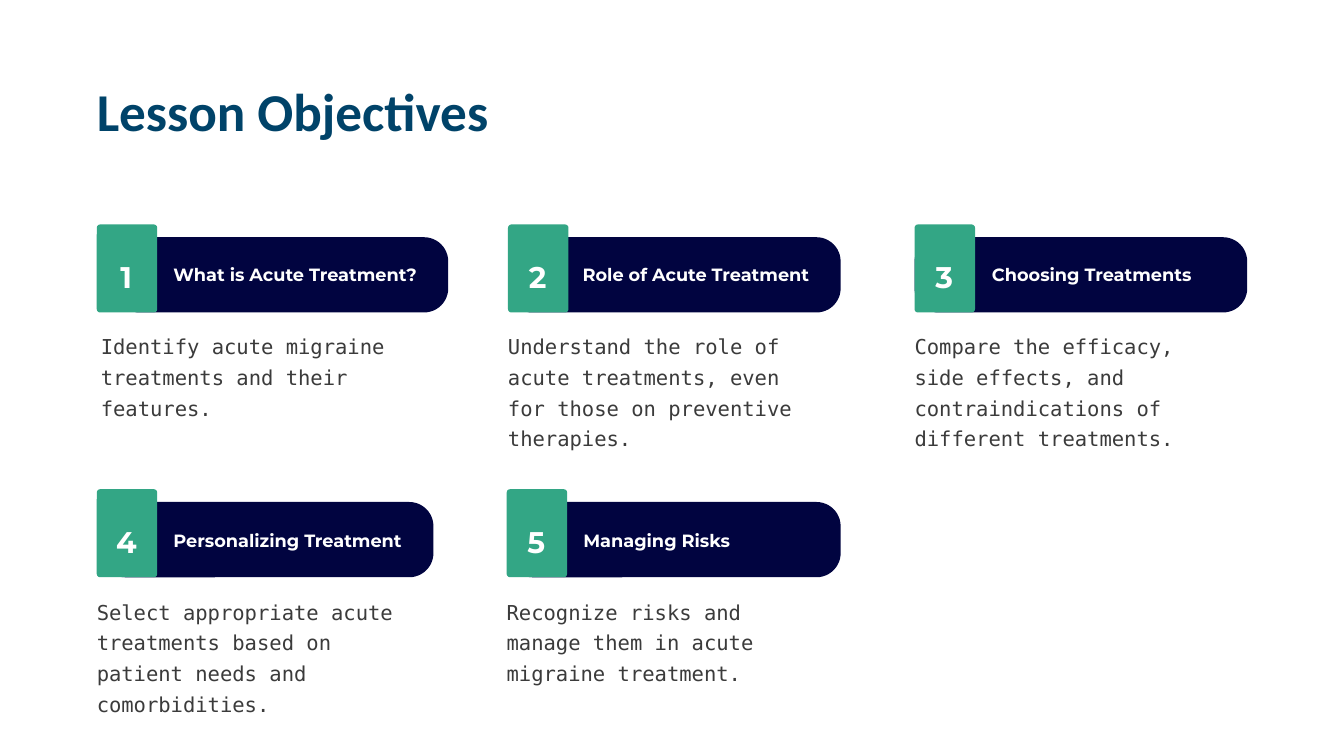
from pptx import Presentation
from pptx.dml.color import RGBColor
from pptx.enum.shapes import MSO_SHAPE
from pptx.enum.text import PP_ALIGN
from pptx.util import Inches, Pt

NAVY, GREEN = "010440", "33A685"
TITLE = "Lesson Objectives"

# row, left edges of (tab, bar, heading, body), heading, body
OBJECTIVES = [
    (0, (1.44, 1.72, 2.58, 1.5), "What is Acute Treatment?",
     "Identify acute migraine treatments and their features."),
    (0, (7.56, 7.56, 8.67, 7.56), "Role of Acute Treatment",
     "Understand the role of acute treatments, even for those on preventive therapies."),
    (0, (13.61, 13.61, 14.76, 13.61), "Choosing Treatments",
     "Compare the efficacy, side effects, and contraindications of different treatments."),
    (1, (1.44, 1.5, 2.58, 1.44), "Personalizing Treatment",
     "Select appropriate acute treatments based on patient needs and comorbidities."),
    (1, (7.54, 7.56, 8.68, 7.54), "Managing Risks",
     "Recognize risks and manage them in acute migraine treatment."),
]
SHAPE_TOP, SHAPE_PITCH = 3.34, 3.94
TEXT_TOP, TEXT_PITCH = 3.76, 3.95

# font values, colour, line spacing in points, alignment
STYLES = {
    "title": (dict(name="Calibri", size=Pt(57), bold=True), "004369", 79.8, PP_ALIGN.LEFT),
    "number": (dict(name="Montserrat", size=Pt(32), bold=True), "FFFFFF", 44.8, PP_ALIGN.CENTER),
    "heading": (dict(name="Montserrat", size=Pt(19), bold=True), "FFFFFF", 26.6, PP_ALIGN.LEFT),
    "body": (dict(name="DejaVu Sans Mono", size=Pt(22)), "3B3B3B", 33, PP_ALIGN.LEFT),
}


def rgb(color):
    return RGBColor.from_string(color)


def add_block(slide, x, y, w, h, radius, color):
    """Add a plain rounded rectangle with a corner radius in inches."""
    s = slide.shapes.add_shape(MSO_SHAPE.ROUNDED_RECTANGLE,
                               Inches(x), Inches(y), Inches(w), Inches(h))
    s.adjustments[0] = radius / min(w, h)
    s.fill.solid()
    s.fill.fore_color.rgb = rgb(color)
    s.line.fill.background()
    s.shadow.inherit = False


def add_text(slide, x, y, w, h, text, style):
    font, color, spacing, align = STYLES[style]
    tf = slide.shapes.add_textbox(Inches(x), Inches(y), Inches(w), Inches(h)).text_frame
    tf.word_wrap = True
    for side in ("left", "top", "right", "bottom"):
        setattr(tf, f"margin_{side}", 0)
    p = tf.paragraphs[0]
    p.alignment, p.line_spacing = align, Pt(spacing)
    r = p.add_run()
    r.text = text
    for name, value in font.items():
        setattr(r.font, name, value)
    r.font.color.rgb = rgb(color)


def add_objective(slide, number, row, lefts, heading, body):
    tab_x, bar_x, heading_x, body_x = lefts
    top = SHAPE_TOP + row * SHAPE_PITCH
    text_top = TEXT_TOP + row * TEXT_PITCH
    add_block(slide, bar_x, top + 0.19, 4.95, 1.12, 0.36, NAVY)
    add_block(slide, tab_x, top, 0.9, 1.31, 0.05, GREEN)
    add_text(slide, tab_x + 0.15, text_top, 0.58, 0.59, str(number), "number")
    add_text(slide, heading_x, text_top + 0.12, 3.65, 0.36, heading, "heading")
    add_text(slide, body_x, text_top + 1.12, 4.54, 1.8, body, "body")


def main():
    prs = Presentation()
    prs.slide_width, prs.slide_height = Inches(20), Inches(11.25)
    slide = prs.slides.add_slide(prs.slide_layouts[6])
    add_text(slide, 1.44, 1, 7.67, 1.06, TITLE, "title")
    for number, objective in enumerate(OBJECTIVES, 1):
        add_objective(slide, number, *objective)
    prs.save("out.pptx")


if __name__ == "__main__":
    main()
